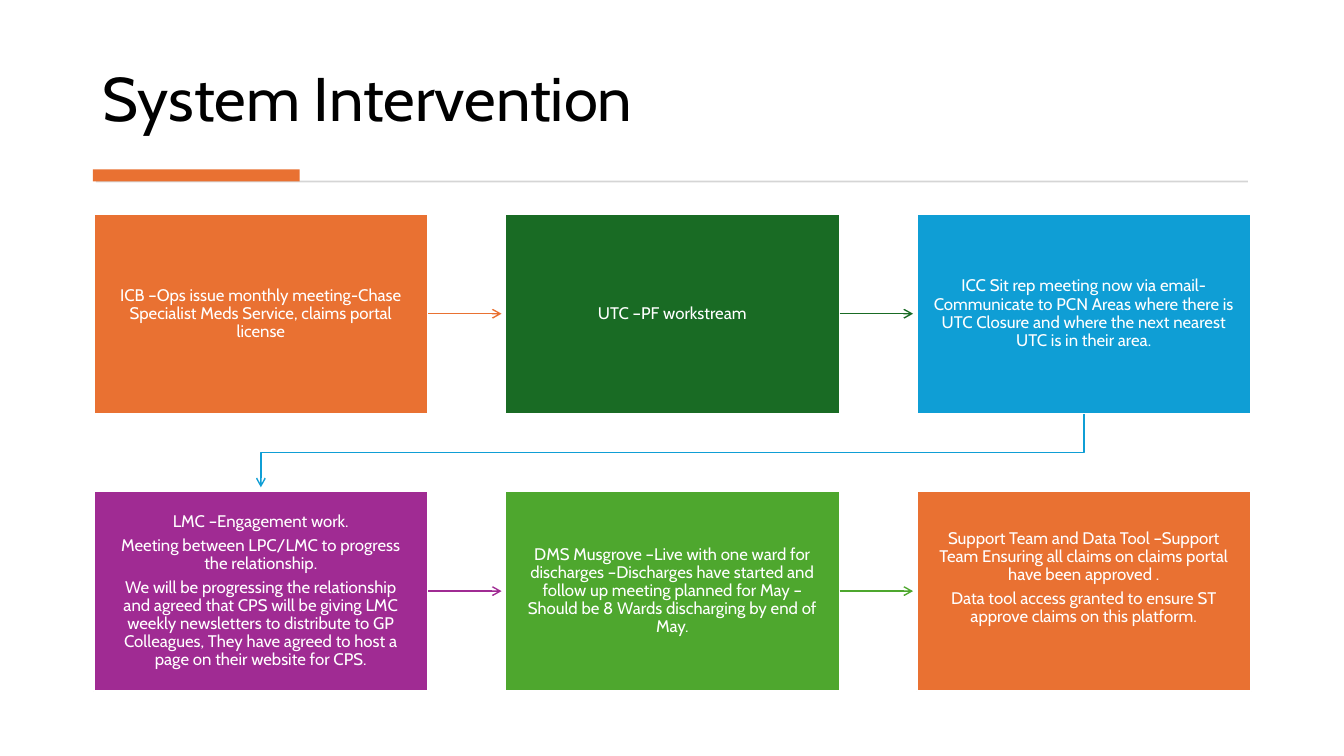
from lxml.etree import SubElement
from pptx import Presentation
from pptx.dml.color import RGBColor
from pptx.enum.shapes import MSO_CONNECTOR as Link, MSO_SHAPE as Shape
from pptx.enum.text import MSO_ANCHOR as Anchor, PP_ALIGN as Align
from pptx.oxml.ns import qn
from pptx.util import Cm, Pt

COLOURS = {
    "orange": "E97132", "forest": "196B24", "blue": "0F9ED5",
    "purple": "A02B93", "green": "4EA72E", "rule": "D5D5D5",
    "white": "FFFFFF", "black": "000000",
}
FONT = "Cabin"
COLUMNS = 3
CARD_W, CARD_H = 8.43, 5.05
ARROW_GAP = 0.09
STEPS = [
    ("orange", ["ICB –Ops issue monthly meeting-Chase Specialist Meds Service, "
                "claims portal license"]),
    ("forest", ["UTC –PF workstream"]),
    ("blue", ["ICC Sit rep meeting now via email-Communicate to PCN Areas where there "
              "is UTC Closure and where the next nearest UTC is in their area."]),
    ("purple", ["LMC –Engagement work.",
                "Meeting between LPC/LMC to progress the relationship.",
                "We will be progressing the relationship and agreed that CPS will be "
                "giving LMC weekly newsletters to distribute to GP Colleagues, They have "
                "agreed to host a page on their website for CPS."]),
    ("green", ["DMS Musgrove –Live with one ward for discharges –Discharges have started "
               "and follow up meeting planned for May –Should be 8 Wards discharging by "
               "end of May."]),
    ("orange", ["Support Team and Data Tool –Support Team Ensuring all claims on "
                "claims portal have been approved .",
                "Data tool access granted to ensure ST approve claims on this platform."]),
]


def colour(name):
    return RGBColor.from_string(COLOURS[name])


def write(shape, paragraphs, size=12, ink="white", align=Align.CENTER,
          anchor=Anchor.MIDDLE, insets=(0.41, 0.43, 0.41, 0.43), after=4.2):
    frame = shape.text_frame
    frame.word_wrap = True
    frame.vertical_anchor = anchor
    (frame.margin_left, frame.margin_top,
     frame.margin_right, frame.margin_bottom) = map(Cm, insets)
    for index, words in enumerate(paragraphs):
        paragraph = frame.add_paragraph() if index else frame.paragraphs[0]
        paragraph.text = words
        paragraph.alignment = align
        paragraph.line_spacing = 0.9
        paragraph.space_after = Pt(after)
        paragraph.font.name = FONT
        paragraph.font.size = Pt(size)
        paragraph.font.color.rgb = colour(ink)


def add_block(slide, left, top, width, height, fill, outline=None):
    block = slide.shapes.add_shape(Shape.RECTANGLE, Cm(left), Cm(top), Cm(width), Cm(height))
    block.shadow.inherit = False
    block.fill.solid()
    block.fill.fore_color.rgb = colour(fill)
    if outline:
        block.line.color.rgb = colour(outline)
        block.line.width = Pt(1.5)
    else:
        block.line.fill.background()
    return block


def style_arrow(arrow, ink):
    arrow.line.color.rgb = colour(ink)
    arrow.line.width = Pt(1)
    SubElement(arrow.line._get_or_add_ln(), qn("a:tailEnd"), type="arrow")


def add_header(slide, left, top, width, height):
    title = slide.shapes.add_textbox(Cm(left), Cm(top), Cm(width), Cm(height))
    write(title, ["System Intervention"], size=44, ink="black", align=Align.LEFT,
          anchor=Anchor.BOTTOM, insets=(0.25, 0.13, 0.25, 0.13), after=0)
    add_block(slide, left + 0.08, top + 3.84, width - 0.15, 0.05, "rule")
    add_block(slide, left, top + 3.56, 5.21, 0.3, "orange")


def add_arrow_right(slide, card, gap, ink):
    start = card.left + card.width
    middle = card.top + card.height // 2
    arrow = slide.shapes.add_connector(
        Link.STRAIGHT, start, middle, start + Cm(gap - ARROW_GAP), middle)
    arrow.begin_connect(card, 3)
    style_arrow(arrow, ink)
    SubElement(arrow._element.spPr, qn("a:effectLst"))


def add_arrow_to_next_row(slide, card, target, ink):
    start_x = card.left + card.width // 2
    end_x = target.left + target.width // 2
    start_y = card.top + card.height
    turn_y = (start_y + target.top) // 2
    outline = slide.shapes.build_freeform(start_x, start_y)
    outline.add_line_segments(
        [(start_x, turn_y), (end_x, turn_y), (end_x, target.top - Cm(ARROW_GAP))], close=False)
    arrow = outline.convert_to_shape()
    arrow.shadow.inherit = False
    arrow.fill.background()
    style_arrow(arrow, ink)


def add_flow(slide, left, top, width, height):
    column_gap = (width - COLUMNS * CARD_W) / (COLUMNS - 1)
    row_step = height - CARD_H
    cards = []
    for index, (fill, paragraphs) in enumerate(STEPS):
        row, column = divmod(index, COLUMNS)
        card = add_block(slide, left + column * (CARD_W + column_gap), top + row * row_step,
                         CARD_W, CARD_H, fill, outline="white")
        is_last = index == len(STEPS) - 1
        write(card, paragraphs, insets=(0.41, 0.43, 0.41, 1.08 if is_last else 0.43))
        cards.append(card)
    for index, card in enumerate(cards[:-1]):
        ink = STEPS[index][0]
        if (index + 1) % COLUMNS:
            add_arrow_right(slide, card, column_gap, ink)
        else:
            add_arrow_to_next_row(slide, card, cards[index + 1], ink)


def main():
    deck = Presentation()
    deck.slide_width, deck.slide_height = Cm(33.87), Cm(19.05)
    slide = deck.slides.add_slide(deck.slide_layouts[6])
    add_header(slide, 2.34, 0.71, 29.18, 2.82)
    add_flow(slide, 2.36, 5.38, 29.17, 12.04)
    deck.save("out.pptx")


if __name__ == "__main__":
    main()
